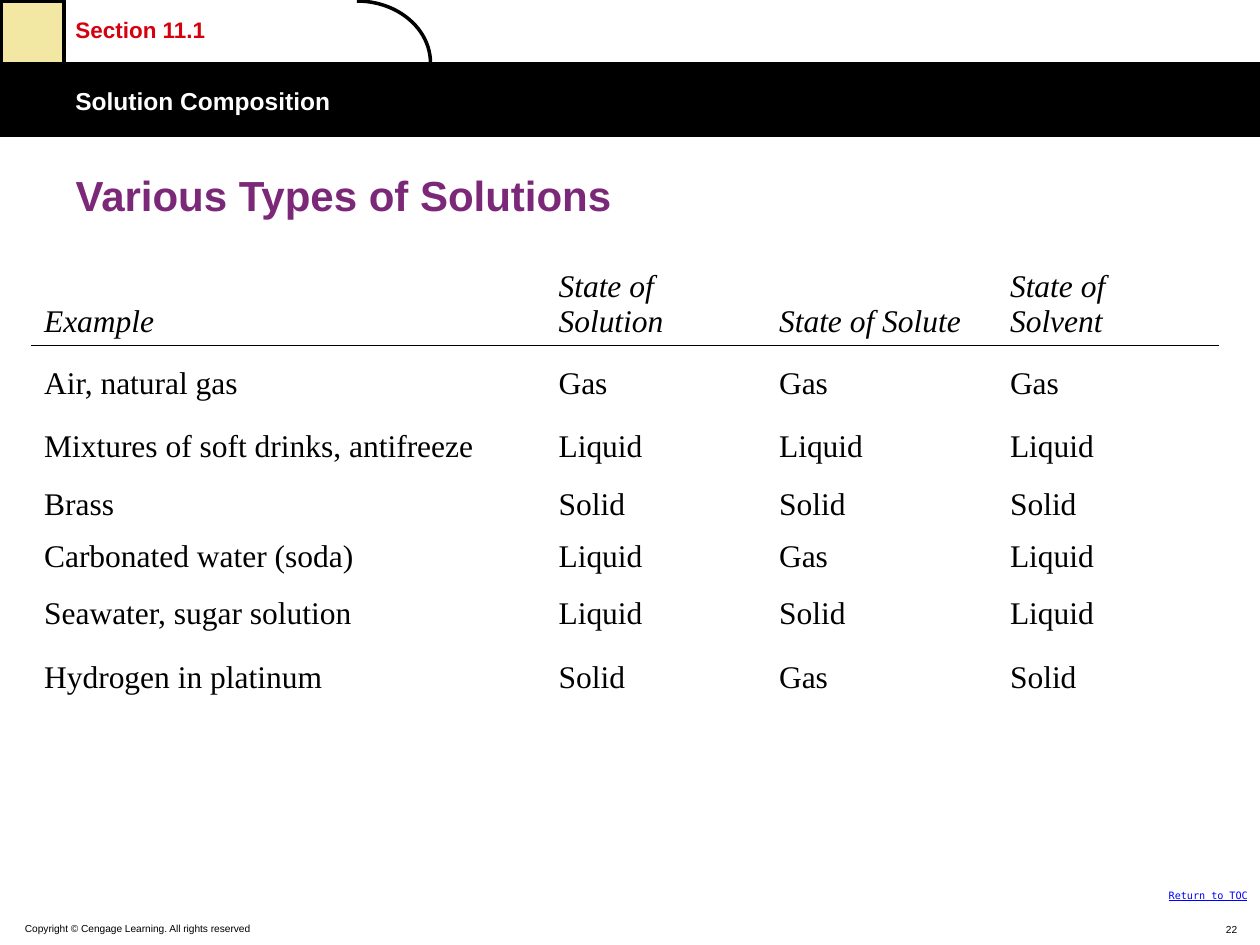
from dataclasses import dataclass

from lxml import etree
from pptx import Presentation
from pptx.dml.color import RGBColor
from pptx.enum.shapes import MSO_SHAPE
from pptx.enum.text import MSO_ANCHOR, PP_ALIGN
from pptx.oxml.ns import qn
from pptx.util import Emu, Inches, Pt

RECT, ARC = MSO_SHAPE.RECTANGLE, MSO_SHAPE.ARC
MIDDLE, BOTTOM = MSO_ANCHOR.MIDDLE, MSO_ANCHOR.BOTTOM
LEFT, RIGHT = PP_ALIGN.LEFT, PP_ALIGN.RIGHT
BLACK, WHITE, RED = "000000", "FFFFFF", "D6000E"
PURPLE, CREAM, BLUE = "7C2878", "F3E8A3", "0000FF"
UNIT = Inches(1) // 12  # the slide is a grid of 120 columns by 90 rows


@dataclass
class Font:
    size: float
    color: str = BLACK
    name: str = "Arial"
    bold: bool = False
    italic: bool = False
    under: bool = False


@dataclass
class Box:
    col: float
    row: float
    wide: float
    high: float

    def place(self) -> list[Emu]:
        return [grid(n) for n in (self.col, self.row, self.wide, self.high)]


@dataclass
class Label:
    text: str
    box: Box
    font: Font
    align: PP_ALIGN = LEFT
    lift: float = 0  # inches added to the bottom inset


@dataclass
class Form:
    kind: MSO_SHAPE
    box: Box
    fill: str | None
    width: float


def grid(n: float) -> Emu:
    return Emu(round(n * UNIT))


def rgb(color: str) -> RGBColor:
    return RGBColor.from_string(color)


def write(frame, text: str, font: Font, align: PP_ALIGN = LEFT) -> None:
    frame.text = text
    frame.word_wrap = True
    para = frame.paragraphs[0]
    para.alignment = align
    for run in para.runs:
        run.font.name, run.font.size = font.name, Pt(font.size)
        run.font.bold, run.font.italic = font.bold, font.italic
        run.font.underline = font.under
        run.font.color.rgb = rgb(font.color)


def draw_form(slide, form: Form) -> None:
    shape = slide.shapes.add_shape(form.kind, *form.box.place())
    shape.shadow.inherit = False
    if form.fill:
        shape.fill.solid()
        shape.fill.fore_color.rgb = rgb(form.fill)
    else:
        shape.fill.background()
    shape.line.color.rgb = rgb(BLACK)
    shape.line.width = Pt(form.width)


def draw_label(slide, label: Label) -> None:
    frame = slide.shapes.add_textbox(*label.box.place()).text_frame
    frame.vertical_anchor = MIDDLE
    frame.margin_bottom = Inches(0.05 + label.lift)
    write(frame, label.text, label.font, label.align)


def add_rule(cell, side: str) -> None:
    line = etree.Element(qn(f"a:{side}"), w=str(Pt(1)))
    fill = etree.SubElement(line, qn("a:solidFill"))
    etree.SubElement(fill, qn("a:srgbClr"), val=BLACK)
    cell._tc.get_or_add_tcPr().insert(0, line)


def draw_table(slide, box: Box, cols: list[float], rows: list[float],
               data: list[tuple[str, ...]]) -> None:
    table = slide.shapes.add_table(len(rows), len(cols), *box.place()).table
    table.first_row = table.horz_banding = False
    for col, wide in zip(table.columns, cols):
        col.width = grid(wide)
    for r, (high, words) in enumerate(zip(rows, data)):
        table.rows[r].height = grid(high)
        font = Font(18, name="Times New Roman", italic=r == 0)
        for c, word in enumerate(words):
            cell = table.cell(r, c)
            cell.fill.background()
            cell.vertical_anchor = BOTTOM
            write(cell.text_frame, word, font)
            # One rule parts the heading row from the body
            if r < 2:
                add_rule(cell, ("lnB", "lnT")[r])


FORMS = [
    Form(RECT, Box(0, 6, 120, 7), BLACK, 0.75),
    Form(ARC, Box(27, 0.1, 14, 11.8), None, 2),
    Form(RECT, Box(0.1, 0.1, 6, 6), CREAM, 2),
]
SMALL = Font(5.8)
LABELS = [
    Label("Section 11.1", Box(6, 0.36, 34.2, 5.64),
          Font(12.8, RED, bold=True), lift=0.06),
    Label("Solution Composition", Box(6, 7, 114, 6),
          Font(14, WHITE, bold=True), lift=0.06),
    Label("Return to TOC", Box(107, 84, 13, 2.64),
          Font(5.8, BLUE, "DejaVu Sans Mono", under=True), RIGHT),
    Label("Copyright © Cengage Learning. All rights reserved",
          Box(1.2, 86.9, 77, 3), SMALL),
    Label("22", Box(87, 87, 32, 3), SMALL, RIGHT),
]
COLS = [49, 21, 22, 21]
ROWS = [8.9, 5.9, 6, 5.5, 5, 5.4, 6.1]
DATA = [
    ("Example", "State of Solution", "State of Solute", "State of Solvent"),
    ("Air, natural gas", "Gas", "Gas", "Gas"),
    ("Mixtures of soft drinks, antifreeze", "Liquid", "Liquid", "Liquid"),
    ("Brass", "Solid", "Solid", "Solid"),
    ("Carbonated water (soda)", "Liquid", "Gas", "Liquid"),
    ("Seawater, sugar solution", "Liquid", "Solid", "Liquid"),
    ("Hydrogen in platinum", "Solid", "Gas", "Solid"),
]


def main() -> None:
    deck = Presentation()
    deck.slide_width, deck.slide_height = grid(120), grid(90)
    slide = deck.slides.add_slide(deck.slide_layouts[5])

    # Header band and small labels
    for form in FORMS:
        draw_form(slide, form)
    for label in LABELS:
        draw_label(slide, label)

    # Title
    title = slide.shapes.title
    title.left, title.top, title.width, title.height = Box(6, 15, 108, 7).place()
    title.text_frame.vertical_anchor = MIDDLE
    write(title.text_frame, "Various Types of Solutions",
          Font(24, PURPLE, bold=True))

    # Table of solution types
    draw_table(slide, Box(3, 24, sum(COLS), sum(ROWS)), COLS, ROWS, DATA)
    deck.save("out.pptx")


if __name__ == "__main__":
    main()
